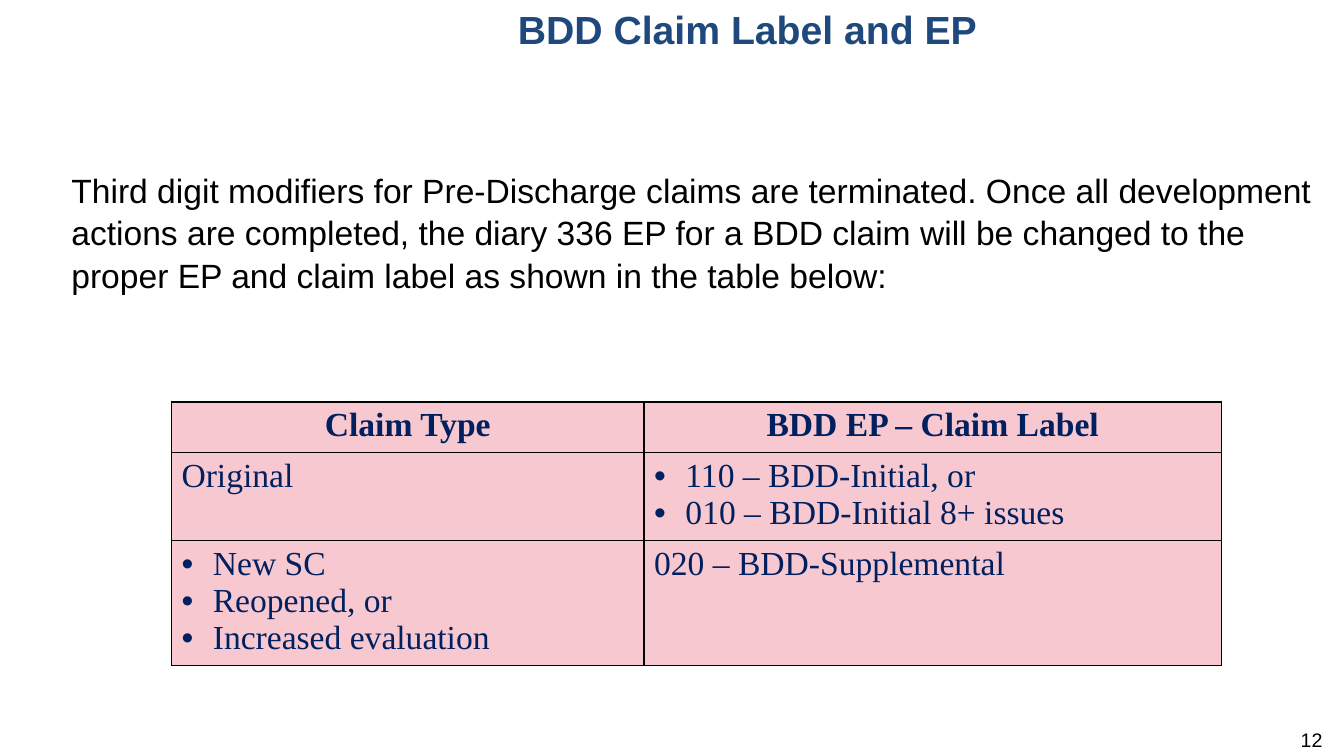
from lxml import etree
from pptx import Presentation
from pptx import util as u
from pptx.dml.color import RGBColor
from pptx.enum import text
from pptx.oxml.ns import qn

COLORS = {"title": "1F497D", "body": "000000", "table": "002060",
          "fill": "F7C8CF", "border": "000000"}
TITLE = "BDD Claim Label and EP"
BODY = ("Third digit modifiers for Pre-Discharge claims are terminated. "
        "Once all development actions are completed, the diary 336 EP for a BDD "
        "claim will be changed to the proper EP and claim label as shown in the "
        "table below:")
PAGE_NUMBER = "12"
CLAIM_ROWS = [
    (["Claim Type"], ["BDD EP – Claim Label"]),
    (["Original"], ["110 – BDD-Initial, or", "010 – BDD-Initial 8+ issues"]),
    (["New SC", "Reopened, or", "Increased evaluation"], ["020 – BDD-Supplemental"]),
]
COLUMN_WIDTHS = [11.91, 14.55]
ROW_HEIGHTS = [1.27, 2.21, 3.15]
BULLET_INDENT = 0.79


def add_bullet(paragraph):
    properties = paragraph._p.get_or_add_pPr()
    indent = u.Cm(BULLET_INDENT)
    properties.set("marL", str(indent))
    properties.set("indent", str(-indent))
    etree.SubElement(properties, qn("a:buFont")).set("typeface", "Arial")
    etree.SubElement(properties, qn("a:buChar")).set("char", "•")


def write_text(frame, lines, size=24, font="Arial", color="body", bold=False,
               align=text.PP_ALIGN.LEFT, bullets=False, space_after=0, line_spacing=1.0):
    for index, line in enumerate(lines):
        paragraph = frame.paragraphs[0] if index == 0 else frame.add_paragraph()
        paragraph.alignment = align
        paragraph.line_spacing = line_spacing
        paragraph.space_before = u.Pt(0)
        paragraph.space_after = u.Pt(space_after)
        if bullets:
            add_bullet(paragraph)
        run = paragraph.add_run()
        run.text = line
        run.font.name = font
        run.font.size = u.Pt(size)
        run.font.bold = bold
        run.font.color.rgb = RGBColor.from_string(COLORS[color])


def place(shape, left, top, width, height):
    shape.left, shape.top = u.Cm(left), u.Cm(top)
    shape.width, shape.height = u.Cm(width), u.Cm(height)
    frame = shape.text_frame
    frame.word_wrap = True
    frame.auto_size = text.MSO_AUTO_SIZE.NONE
    frame.vertical_anchor = text.MSO_ANCHOR.TOP
    return frame


def add_text_box(slide, left, top, width, height):
    return place(slide.shapes.add_textbox(0, 0, 0, 0), left, top, width, height)


def style_cell(cell):
    properties = cell._tc.get_or_add_tcPr()
    for side in ("lnL", "lnR", "lnT", "lnB"):
        border = etree.SubElement(properties, qn(f"a:{side}"), w=str(u.Pt(1)))
        solid = etree.SubElement(border, qn("a:solidFill"))
        etree.SubElement(solid, qn("a:srgbClr")).set("val", COLORS["border"])
    cell.fill.solid()
    cell.fill.fore_color.rgb = RGBColor.from_string(COLORS["fill"])


def add_claim_table(slide):
    table = slide.shapes.add_table(
        len(ROW_HEIGHTS), len(COLUMN_WIDTHS), u.Cm(4.32), u.Cm(10.13),
        u.Cm(sum(COLUMN_WIDTHS)), u.Cm(sum(ROW_HEIGHTS))).table
    table.horz_banding = False
    for column, width in zip(table.columns, COLUMN_WIDTHS):
        column.width = u.Cm(width)
    for row, height in zip(table.rows, ROW_HEIGHTS):
        row.height = u.Cm(height)
    for row_index, row in enumerate(CLAIM_ROWS):
        header = row_index == 0
        for column_index, lines in enumerate(row):
            cell = table.cell(row_index, column_index)
            style_cell(cell)
            write_text(cell.text_frame, lines, font="Times New Roman", color="table",
                       bold=header, bullets=len(lines) > 1,
                       align=text.PP_ALIGN.CENTER if header else text.PP_ALIGN.LEFT)


def main():
    presentation = Presentation()
    presentation.slide_width, presentation.slide_height = u.Cm(33.87), u.Cm(19.05)
    slide = presentation.slides.add_slide(presentation.slide_layouts[5])
    write_text(place(slide.shapes.title, 5.69, 0, 26.29, 3.2), [TITLE],
               size=28, color="title", bold=True, align=text.PP_ALIGN.CENTER)
    write_text(add_text_box(slide, 1.55, 4.11, 31.85, 13.39), [BODY],
               space_after=6, line_spacing=1.05)
    number_frame = add_text_box(slide, 25.68, 18.34, 7.9, 1.02)
    number_frame.margin_top = 0
    write_text(number_frame, [PAGE_NUMBER], size=14, align=text.PP_ALIGN.RIGHT)
    add_claim_table(slide)
    presentation.save("out.pptx")


if __name__ == "__main__":
    main()
